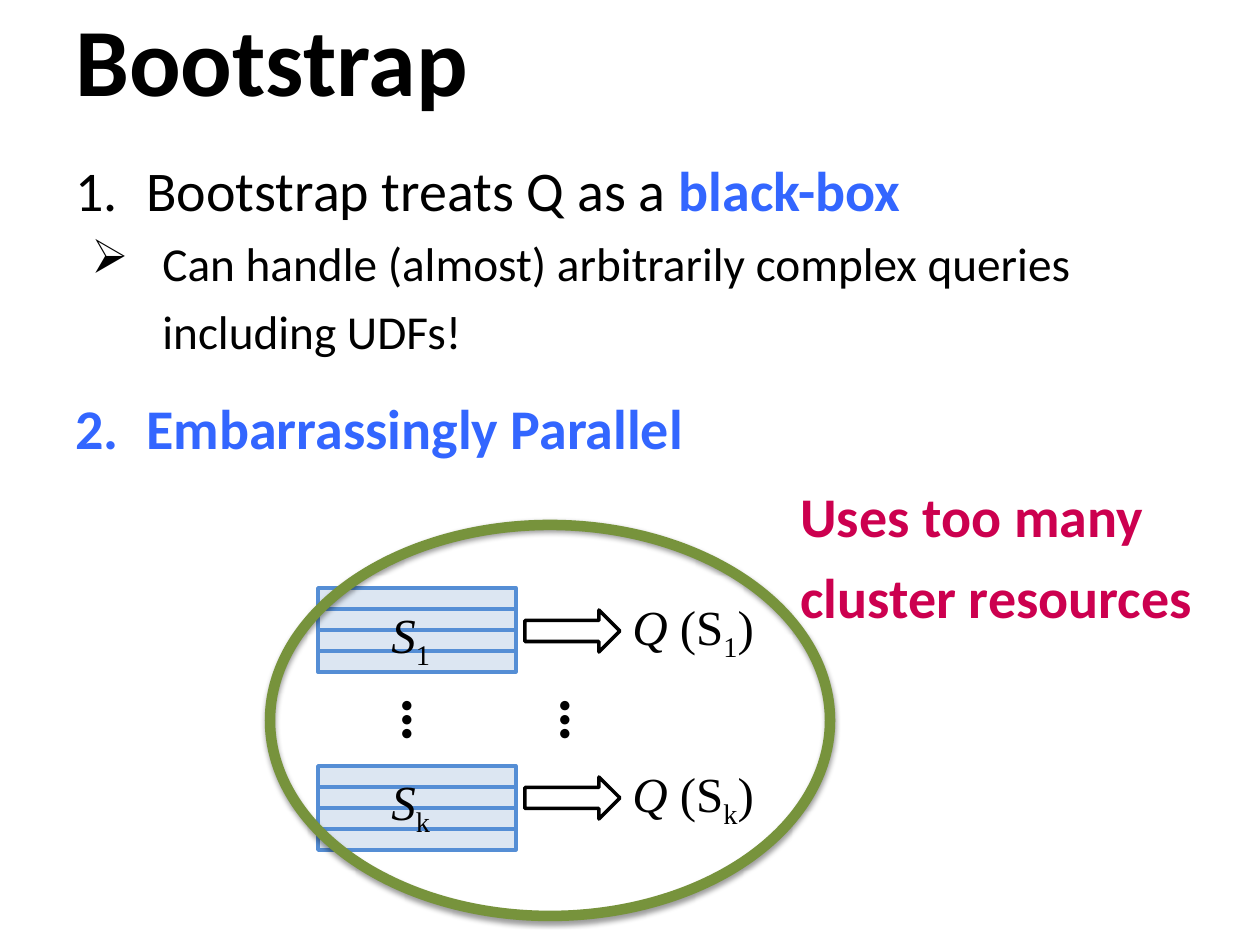
from lxml import etree
from pptx import Presentation
from pptx.dml.color import RGBColor
from pptx.enum.shapes import MSO_SHAPE
from pptx.enum.text import MSO_ANCHOR
from pptx.oxml.ns import qn
from pptx.util import Emu, Pt

RECT = MSO_SHAPE.RECTANGLE
ARROW = MSO_SHAPE.RIGHT_ARROW
OVAL = MSO_SHAPE.OVAL
TOP = MSO_ANCHOR.TOP
MIDDLE = MSO_ANCHOR.MIDDLE

SANS, SERIF = "Calibri", "Times New Roman"
BLACK, BLUE, CRIMSON = "000000", "3366FF", "CC004F"
PALE, STEEL, GREEN = "DCE6F2", "558ED5", "77933C"
MATH = dict(size=Pt(28), name=SERIF)


def px(n):
    return Emu(round(n * 914400 / 126))


def rgb(code):
    return RGBColor.from_string(code)


def add_run(p, text, color=BLACK, base=None, **fmt):
    r = p.add_run()
    r.text = text
    for key, value in fmt.items():
        setattr(r.font, key, value)
    r.font.color.rgb = rgb(color)
    if base:
        r.font._element.set("baseline", str(base))


def add_text(slide, box, anchor=TOP, wrap=True):
    sp = slide.shapes.add_textbox(*map(px, box))
    tf = sp.text_frame
    tf.word_wrap = wrap
    tf.vertical_anchor = anchor
    return sp, tf.paragraphs[0]


def add_outline(slide, kind, box, line, width, fill=None):
    sp = slide.shapes.add_shape(kind, *map(px, box))
    sp.shadow.inherit = False
    if fill:
        sp.fill.solid()
        sp.fill.fore_color.rgb = rgb(fill)
    else:
        sp.fill.background()
    sp.line.color.rgb = rgb(line)
    sp.line.width = Pt(width)
    return sp


def set_bullet(p, left, hang, tag, **attrs):
    pPr = p._p.get_or_add_pPr()
    pPr.set("marL", str(px(left)))
    pPr.set("indent", str(-px(hang)))
    etree.SubElement(pPr, qn("a:" + tag), attrs)


def add_title(slide, box):
    _, p = add_text(slide, box, MIDDLE)
    add_run(p, "Bootstrap", size=Pt(55), name=SANS, bold=True)


def add_points(slide, box):
    sp, first = add_text(slide, box)
    tf = sp.text_frame
    detail, last = tf.add_paragraph(), tf.add_paragraph()
    head = dict(size=Pt(32), name=SANS)

    for p in (first, last):
        p.space_before = Pt(20)
    for p in (first, detail):
        p.line_spacing = 1.2
    detail.level = 1

    set_bullet(first, 71, 71, "buAutoNum", type="arabicPeriod")
    set_bullet(detail, 87, 71, "buChar", char="➢")
    set_bullet(last, 71, 71, "buAutoNum", type="arabicPeriod")

    add_run(first, "Bootstrap treats Q as a ", **head)
    add_run(first, "black-box", BLUE, bold=True, **head)
    add_run(detail, "Can handle (almost) arbitrarily complex queries including UDFs!",
            size=Pt(27), name=SANS)
    add_run(last, "Embarrassingly Parallel", BLUE, bold=True, **head)


def add_sample(slide, x, y, stack_y, index):
    """One resample: stacked rows, its name, an arrow and the query result."""
    for i in range(4):
        add_outline(slide, RECT, (x, stack_y + 21 * i, 198, 21), STEEL, 2, PALE)
    add_outline(slide, ARROW, (x + 207, y + 20, 95, 42), BLACK, 2)

    _, p = add_text(slide, (x + 61, y + 8, 73, 72), wrap=False)
    add_run(p, "S", italic=True, **MATH)
    add_run(p, index, base=-25000, **MATH)

    _, p = add_text(slide, (x + 302, y, 156, 72), wrap=False)
    add_run(p, "Q ", italic=True, **MATH)
    add_run(p, "(S", **MATH)
    add_run(p, index, base=-25000, **MATH)
    add_run(p, ")", **MATH)


def add_dots(slide, box):
    sp, p = add_text(slide, box, wrap=False)
    sp.rotation = 270
    add_run(p, "…", size=Pt(36), name=SANS, bold=True)


def add_ring(slide, box):
    sp = add_outline(slide, OVAL, box, GREEN, 6)
    effects = sp._element.spPr.find(qn("a:effectLst"))
    shadow = etree.SubElement(effects, qn("a:outerShdw"), blurRad=str(Pt(3.1)),
                              dist=str(Pt(1.6)), dir="5400000", rotWithShape="0")
    color = etree.SubElement(shadow, qn("a:srgbClr"), val=BLACK)
    etree.SubElement(color, qn("a:alpha"), val="38000")


def add_diagram(slide, box):
    x, y, w, h = box
    add_sample(slide, x + 48, y + 65, y + 63, "1")
    add_sample(slide, x + 48, y + 232, y + 241, "k")
    for dx in (76, 234):
        add_dots(slide, (x + dx, y + 145, 81, 89))
    add_ring(slide, box)


def add_callout(slide, box):
    _, p = add_text(slide, box)
    p.line_spacing = 1.2
    p.space_before = Pt(20)
    add_run(p, "Uses too many cluster resources", CRIMSON,
            size=Pt(32), name=SANS, bold=True)


def main():
    prs = Presentation()
    prs.slide_width, prs.slide_height = px(1260), px(945)
    slide = prs.slides.add_slide(prs.slide_layouts[6])
    # Diagram below, text regions above it
    add_diagram(slide, (270, 525, 560, 391))
    add_title(slide, (63, -21, 1134, 157))
    add_points(slide, (63, 136, 1134, 368))
    add_callout(slide, (788, 462, 462, 179))
    prs.save("out.pptx")


if __name__ == "__main__":
    main()
